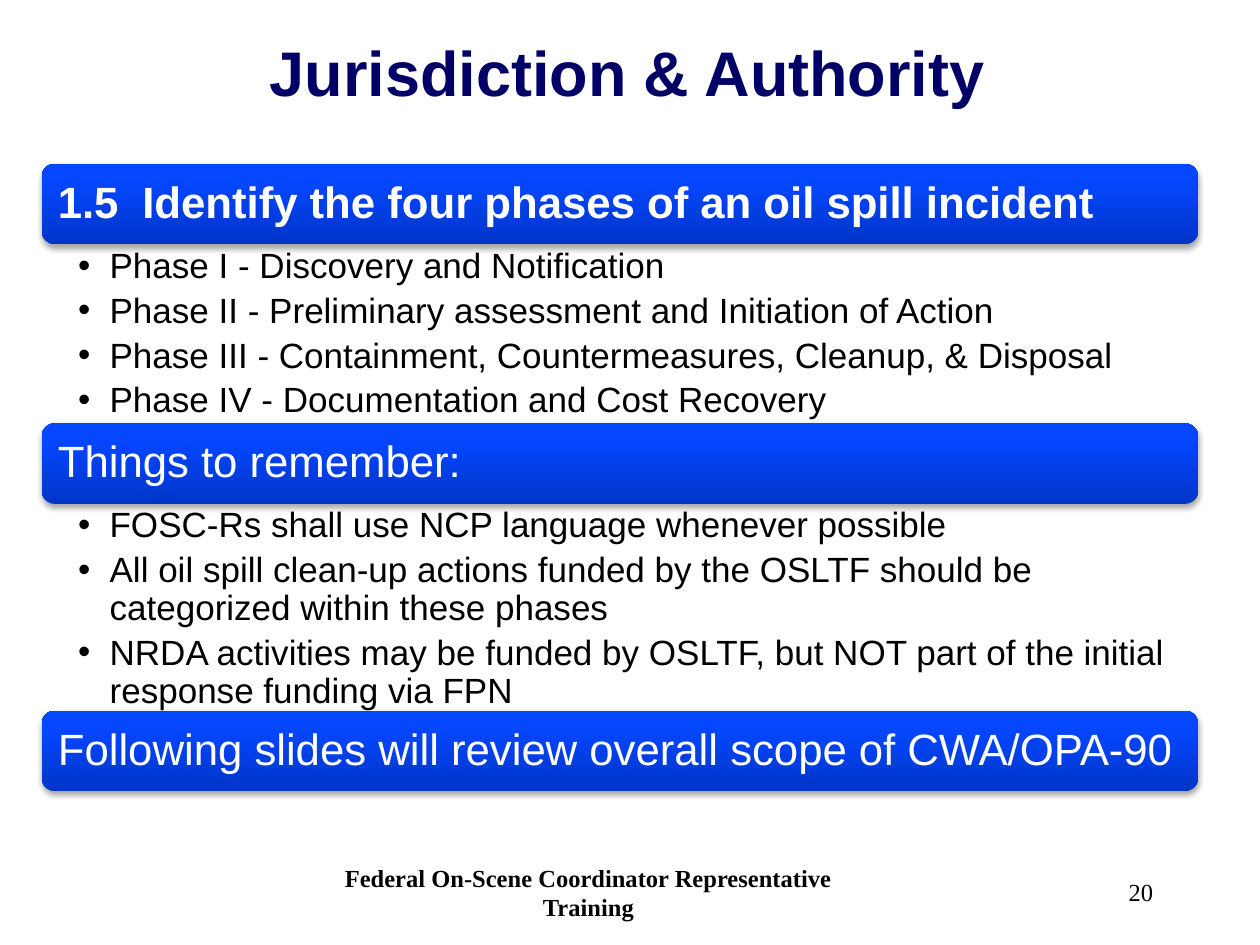
"""Builds the Jurisdiction & Authority slide on the four phases of an oil spill."""
from dataclasses import dataclass

from lxml.etree import SubElement
from pptx import Presentation
from pptx.dml.color import RGBColor as RGB
from pptx.enum.shapes import MSO_SHAPE as SHAPE
from pptx.enum.text import MSO_ANCHOR as ANCHOR, PP_ALIGN as ALIGN
from pptx.oxml import parse_xml
from pptx.oxml.ns import nsdecls, qn
from pptx.util import Inches, Pt


@dataclass(frozen=True)
class Theme:
    title: RGB = RGB(0x00, 0x00, 0x66)
    body: RGB = RGB(0x00, 0x00, 0x00)
    heading: RGB = RGB(0xFF, 0xFF, 0xFF)
    bar_dark: RGB = RGB(0x00, 0x35, 0xC8)
    bar_light: RGB = RGB(0x05, 0x47, 0xFF)
    sans: str = "Arial"
    serif: str = "Times New Roman"
    title_size: int = 36
    heading_size: int = 25
    body_size: int = 20
    footer_size: int = 14


THEME = Theme()
BAR_LEFT, BAR_WIDTH, BAR_HEIGHT = 0.33, 9.18, 0.64
SHADOW = (
    f'<a:outerShdw {nsdecls("a")} blurRad="40000" dist="23000" dir="5400000" rotWithShape="0">'
    '<a:srgbClr val="000000"><a:alpha val="35000"/></a:srgbClr></a:outerShdw>'
)
SECTIONS = [
    (1.3, "1.5\tIdentify the four phases of an oil spill incident", True, 1.41, [
        "Phase I - Discovery and Notification",
        "Phase II - Preliminary assessment and Initiation of Action",
        "Phase III - Containment, Countermeasures, Cleanup, & Disposal",
        "Phase IV - Documentation and Cost Recovery",
    ]),
    (3.36, "Things to remember:", False, 1.64, [
        "FOSC-Rs shall use NCP language whenever possible",
        "All oil spill clean-up actions funded by the OSLTF should be categorized within these phases",
        "NRDA activities may be funded by OSLTF, but NOT part of the initial response funding via FPN",
    ]),
    (5.64, "Following slides will review overall scope of CWA/OPA-90", False, 0, []),
]


def style(paragraph, size, color, bold=False, face=THEME.sans):
    for run in paragraph.runs:
        run.font.name = face
        run.font.size = Pt(size)
        run.font.bold = bold
        run.font.color.rgb = color


def add_line(slide, box, text, align, wrap, *look):
    frame = slide.shapes.add_textbox(*map(Inches, box)).text_frame
    frame.word_wrap = wrap
    frame.vertical_anchor = ANCHOR.MIDDLE
    frame.text = text
    frame.paragraphs[0].alignment = align
    style(frame.paragraphs[0], *look)


deck = Presentation()
deck.slide_width, deck.slide_height = Inches(10), Inches(7.5)
slide = deck.slides.add_slide(deck.slide_layouts[6])

add_line(slide, (0.25, 0.17, 9.46, 0.8), "Jurisdiction & Authority", ALIGN.CENTER, True,
         THEME.title_size, THEME.title, True)

for top, heading, bold, list_height, points in SECTIONS:
    bar = slide.shapes.add_shape(
        SHAPE.ROUNDED_RECTANGLE, Inches(BAR_LEFT), Inches(top), Inches(BAR_WIDTH), Inches(BAR_HEIGHT))
    bar.line.fill.background()
    bar.fill.gradient()
    bar.fill.gradient_angle = 90
    for stop, color, position in zip(
            bar.fill.gradient_stops, (THEME.bar_dark, THEME.bar_light), (0, 0.8)):
        stop.color.rgb = color
        stop.position = position
    bar.shadow.inherit = False
    bar.element.spPr.find(qn("a:effectLst")).append(parse_xml(SHADOW))

    label = bar.text_frame
    label.word_wrap = True
    label.vertical_anchor = ANCHOR.MIDDLE
    label.text = heading
    heading_line = label.paragraphs[0]
    heading_line.alignment = ALIGN.LEFT
    heading_line.line_spacing = 0.9
    if "\t" in heading:
        tabs = SubElement(heading_line._p.get_or_add_pPr(), qn("a:tabLst"))
        SubElement(tabs, qn("a:tab"), pos=str(Inches(0.67)), algn="l")
    style(heading_line, THEME.heading_size, THEME.heading, bold)

    if points:
        phase_list = slide.shapes.add_textbox(
            Inches(BAR_LEFT), Inches(top + BAR_HEIGHT), Inches(BAR_WIDTH), Inches(list_height)).text_frame
        phase_list.word_wrap = True
        phase_list.margin_left, phase_list.margin_right = Inches(0.29), Inches(0.19)
        phase_list.margin_top = phase_list.margin_bottom = Inches(0.03)
        phase_list.text = "\n".join(points)
        for point in phase_list.paragraphs:
            point.level = 1
            point.line_spacing = 0.9
            point.space_after = Pt(4)
            layout = point._p.get_or_add_pPr()
            layout.set("marL", str(Inches(0.25)))
            layout.set("indent", str(Inches(-0.25)))
            SubElement(layout, qn("a:buFont"), typeface=THEME.sans)
            SubElement(layout, qn("a:buChar"), char="•")
            style(point, THEME.body_size, THEME.body)

add_line(slide, (7.17, 6.83, 2.08, 0.5), "20", ALIGN.RIGHT, True,
         THEME.footer_size, THEME.body, False, THEME.serif)
add_line(slide, (2.42, 6.83, 4.5, 0.5), "Federal On-Scene Coordinator Representative Training",
         ALIGN.CENTER, False, THEME.footer_size, THEME.body, True, THEME.serif)

deck.save("out.pptx")
